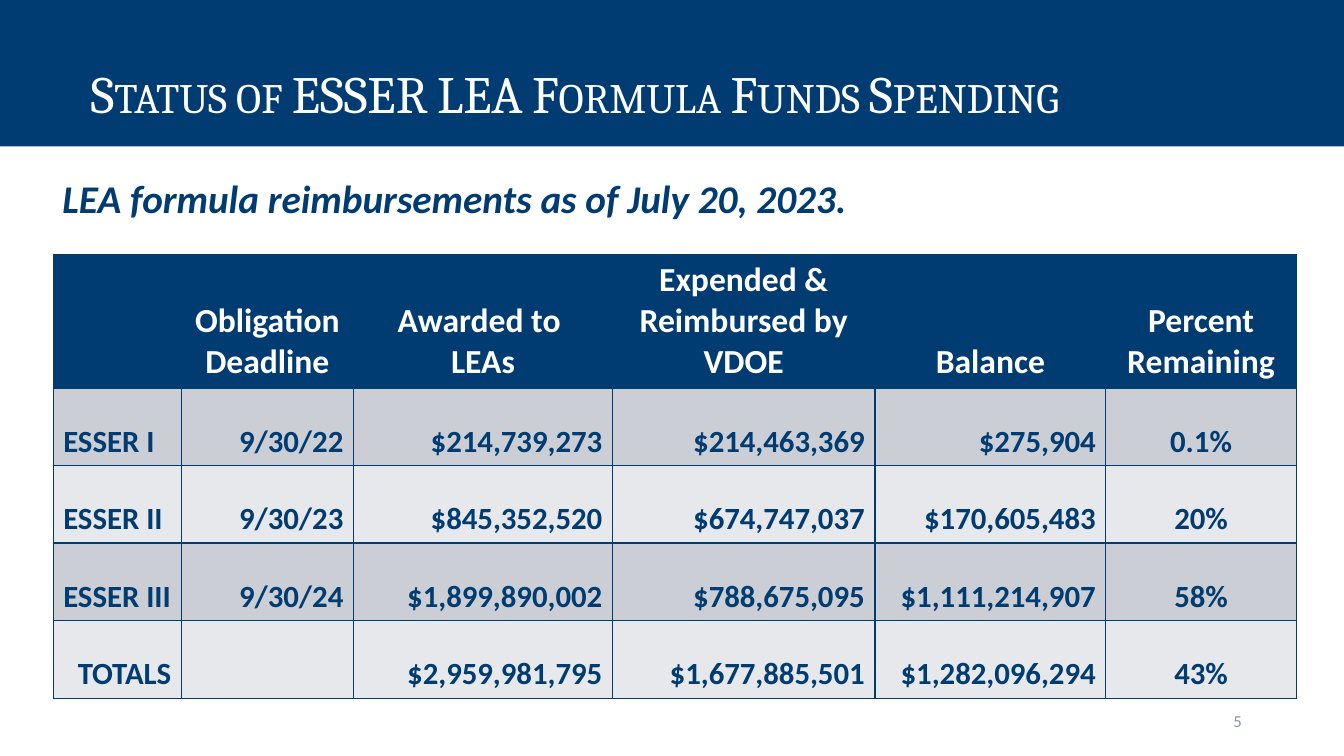
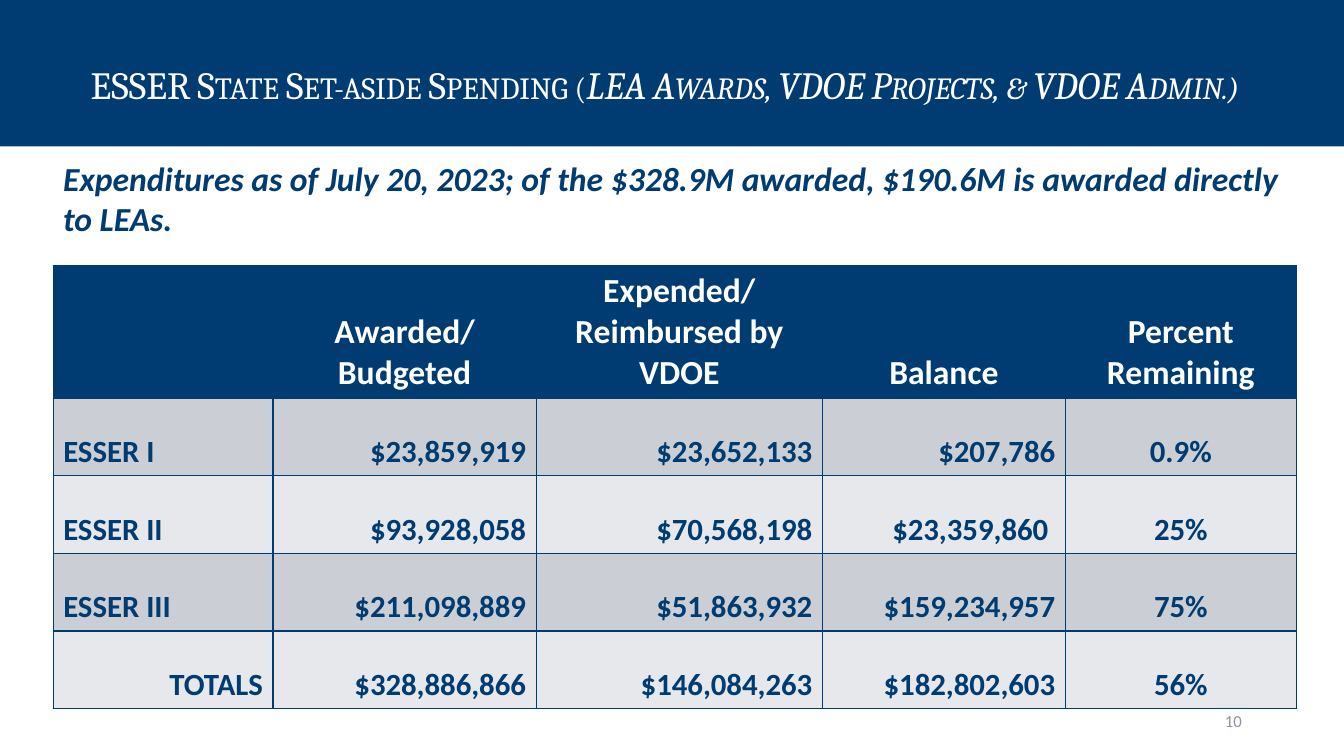
from dataclasses import dataclass

from lxml import etree
from pptx import Presentation
from pptx.dml.color import RGBColor
from pptx.enum.shapes import MSO_SHAPE
from pptx.enum.text import MSO_ANCHOR, PP_ALIGN
from pptx.oxml.ns import qn
from pptx.util import Pt

LEFT, CENTER, RIGHT = PP_ALIGN.LEFT, PP_ALIGN.CENTER, PP_ALIGN.RIGHT
TOP, MIDDLE, BOTTOM = MSO_ANCHOR.TOP, MSO_ANCHOR.MIDDLE, MSO_ANCHOR.BOTTOM
RECTANGLE = MSO_SHAPE.RECTANGLE

COLORS = {
    "navy": "003C71",
    "white": "FFFFFF",
    "dark_row": "CCCED5",
    "light_row": "E7E8EB",
    "page_number": "8C92A5",
}
PAGE_WIDTH, PAGE_HEIGHT = 960, 540
BAND_HEIGHT = 104.5
TABLE_LEFT = 38
HEADER_HEIGHT, ROW_HEIGHT = 95, 55.4
BORDER_WIDTH = 1
BORDER_TAGS = ("a:lnL", "a:lnR", "a:lnT", "a:lnB")


@dataclass(frozen=True)
class Style:
    size: float
    color: str
    font: str = "Calibri"
    bold: bool = False
    italic: bool = False
    small_caps: bool = False


@dataclass(frozen=True)
class Span:
    text: str
    italic: bool = False


@dataclass(frozen=True)
class Area:
    left: float
    top: float
    width: float
    height: float


@dataclass(frozen=True)
class FundsPage:
    number: int
    title: list[Span]
    title_size: float
    subtitle: str
    subtitle_size: float
    subtitle_area: Area
    table_top: float
    widths: list[float]
    rows: list[list[str]]


HEADER_STYLE = Style(24, "white", bold=True)
BODY_STYLE = Style(22, "navy", bold=True)
NUMBER_STYLE = Style(12, "page_number")
NUMBER_AREA = Area(678.2, 500.4, 216, 28.8)

PAGES = [
    FundsPage(
        number=5,
        title=[Span("Status of ESSER LEA Formula Funds Spending")],
        title_size=37.4,
        subtitle="LEA formula reimbursements as of July 20, 2023.",
        subtitle_size=28,
        subtitle_area=Area(37.5, 121, 712, 41),
        table_top=182,
        widths=[91.5, 123, 185, 187.5, 165, 136],
        rows=[
            ["", "Obligation Deadline", "Awarded to \nLEAs",
             "Expended &\nReimbursed by VDOE", "Balance", "Percent Remaining"],
            ["ESSER I", "9/30/22", "$214,739,273", "$214,463,369", "$275,904", "0.1%"],
            ["ESSER II", "9/30/23", "$845,352,520", "$674,747,037", "$170,605,483", "20%"],
            ["ESSER III", "9/30/24", "$1,899,890,002", "$788,675,095", "$1,111,214,907", "58%"],
            ["TOTALS", "", "$2,959,981,795", "$1,677,885,501", "$1,282,096,294", "43%"],
        ],
    ),
    FundsPage(
        number=10,
        title=[
            Span("ESSER State Set-aside Spending ("),
            Span("LEA Awards, VDOE Projects, & VDOE Admin.)", italic=True),
        ],
        title_size=27.5,
        subtitle="Expenditures as of July 20, 2023; of the $328.9M awarded, "
                 "$190.6M is awarded directly to LEAs.",
        subtitle_size=24,
        subtitle_area=Area(38, 109, 888, 65.5),
        table_top=189.5,
        widths=[157, 188, 204.5, 173.5, 165],
        rows=[
            ["", "Awarded/\nBudgeted", "Expended/\nReimbursed by VDOE",
             "Balance", "Percent Remaining"],
            ["ESSER I", "$23,859,919", "$23,652,133", "$207,786", "0.9%"],
            ["ESSER II", "$93,928,058", "$70,568,198", "$23,359,860 ", "25%"],
            ["ESSER III", "$211,098,889", "$51,863,932", "$159,234,957", "75%"],
            ["TOTALS", "$328,886,866", "$146,084,263", "$182,802,603", "56%"],
        ],
    ),
]


def rgb(name: str) -> RGBColor:
    return RGBColor.from_string(COLORS[name])


def add_span(para, span: Span, style: Style) -> None:
    run = para.add_run()
    run.text = span.text
    font = run.font
    font.name = style.font
    font.size = Pt(style.size)
    font.bold = style.bold
    font.italic = style.italic or span.italic
    font.color.rgb = rgb(style.color)
    if style.small_caps:
        run._r.get_or_add_rPr().set("cap", "small")


def write_lines(frame, text: str, style: Style, align) -> None:
    for index, line in enumerate(text.split("\n")):
        para = frame.add_paragraph() if index else frame.paragraphs[0]
        para.alignment = align
        if line:
            add_span(para, Span(line), style)


def add_text(page, area: Area, text: str, style: Style, align=LEFT, anchor=TOP) -> None:
    box = page.shapes.add_textbox(
        Pt(area.left), Pt(area.top), Pt(area.width), Pt(area.height))
    frame = box.text_frame
    frame.word_wrap = True
    frame.vertical_anchor = anchor
    write_lines(frame, text, style, align)


def add_title_band(page, title: list[Span], size: float) -> None:
    band = page.shapes.add_shape(RECTANGLE, 0, 0, Pt(PAGE_WIDTH), Pt(BAND_HEIGHT))
    band.shadow.inherit = False
    band.fill.solid()
    band.fill.fore_color.rgb = rgb("navy")
    band.line.fill.background()
    frame = band.text_frame
    frame.word_wrap = True
    frame.vertical_anchor = TOP
    frame.margin_left, frame.margin_top = Pt(64.8), Pt(43.5)
    frame.margin_right, frame.margin_bottom = Pt(7.2), Pt(3.6)
    para = frame.paragraphs[0]
    para.alignment = LEFT
    style = Style(size, "white", font="Cambria", small_caps=True)
    for span in title:
        add_span(para, span, style)


def add_borders(cell) -> None:
    properties = cell._tc.get_or_add_tcPr()
    for index, tag in enumerate(BORDER_TAGS):
        line = etree.Element(qn(tag), w=str(Pt(BORDER_WIDTH)))
        fill = etree.SubElement(line, qn("a:solidFill"))
        etree.SubElement(fill, qn("a:srgbClr"), val=COLORS["navy"])
        properties.insert(index, line)


def cell_align(row: int, column: int, last_row: int, last_column: int):
    if row == 0 or column == last_column:
        return CENTER
    return LEFT if column == 0 and row < last_row else RIGHT


def row_color(row: int) -> str:
    if row == 0:
        return "navy"
    return "dark_row" if row % 2 else "light_row"


def add_funds_table(page, top: float, widths: list[float], rows: list[list[str]]) -> None:
    last_row, last_column = len(rows) - 1, len(widths) - 1
    height = HEADER_HEIGHT + ROW_HEIGHT * last_row
    table = page.shapes.add_table(
        len(rows), len(widths), Pt(TABLE_LEFT), Pt(top), Pt(sum(widths)), Pt(height)).table
    table.horz_banding = False
    for column, width in zip(table.columns, widths):
        column.width = Pt(width)
    for row, texts in enumerate(rows):
        table.rows[row].height = Pt(ROW_HEIGHT if row else HEADER_HEIGHT)
        style = BODY_STYLE if row else HEADER_STYLE
        for column, text in enumerate(texts):
            cell = table.cell(row, column)
            cell.fill.solid()
            cell.fill.fore_color.rgb = rgb(row_color(row))
            cell.vertical_anchor = BOTTOM
            add_borders(cell)
            align = cell_align(row, column, last_row, last_column)
            write_lines(cell.text_frame, text, style, align)


def add_funds_page(deck, content: FundsPage) -> None:
    page = deck.slides.add_slide(deck.slide_layouts[6])
    add_title_band(page, content.title, content.title_size)
    add_funds_table(page, content.table_top, content.widths, content.rows)
    add_text(page, NUMBER_AREA, str(content.number), NUMBER_STYLE, RIGHT, MIDDLE)
    subtitle_style = Style(content.subtitle_size, "navy", bold=True, italic=True)
    add_text(page, content.subtitle_area, content.subtitle, subtitle_style)


def main() -> None:
    deck = Presentation()
    deck.slide_width, deck.slide_height = Pt(PAGE_WIDTH), Pt(PAGE_HEIGHT)
    for content in PAGES:
        add_funds_page(deck, content)
    deck.save("out.pptx")


if __name__ == "__main__":
    main()
